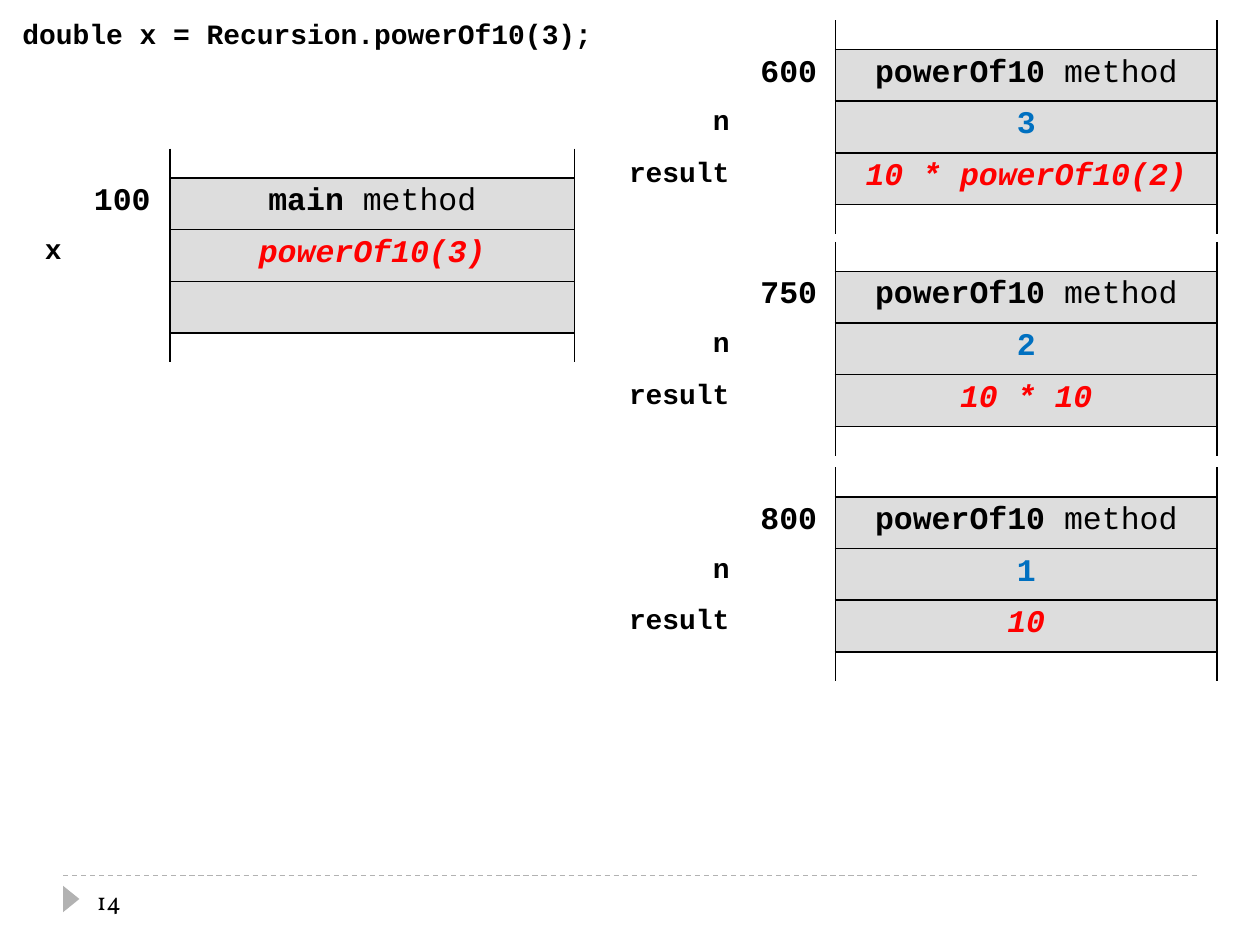
from lxml import etree
from pptx import Presentation
from pptx.dml import color
from pptx.enum import dml, shapes, text
from pptx.oxml import ns
from pptx.util import Inches, Pt

MONO = "Courier New"
BLACK, GRAY, RED, BLUE = "000000", "B2B2B2", "FF0000", "0070C0"
CELL_FILL = "DDDDDD"
ROW_HEIGHTS = (0.23, 0.41, 0.41, 0.41, 0.23)
CALL_COLUMNS = (1.17, 0.74, 3.03)
MAIN_COLUMNS = (0.53, 0.76, 3.21)
LEFT, RIGHT = text.PP_ALIGN.LEFT, text.PP_ALIGN.RIGHT
CENTER = text.PP_ALIGN.CENTER


def rgb(value):
    """Turn a hex string into a colour."""
    return color.RGBColor.from_string(value)


def write(para, words, font=MONO, size=18, shade=BLACK, bold=True, italic=False, align=CENTER):
    """Add one formatted span of text to a paragraph."""
    para.alignment = align
    span = para.add_run()
    span.text = words
    span.font.name = font
    span.font.size = Pt(size)
    span.font.bold = bold
    span.font.italic = italic
    span.font.color.rgb = rgb(shade)


def add_label(page, left, top, width, height, words, wrap=True, **style):
    """Place a text box holding one line."""
    box = page.shapes.add_textbox(Inches(left), Inches(top), Inches(width), Inches(height))
    frame = box.text_frame
    frame.word_wrap = wrap
    frame.vertical_anchor = text.MSO_ANCHOR.MIDDLE
    write(frame.paragraphs[0], words, align=LEFT, **style)


def set_borders(cell, edges):
    """Draw the named edges of a cell in black and hide the others."""
    properties = cell._tc.get_or_add_tcPr()
    for edge in "LRTB":
        line = etree.SubElement(properties, ns.qn(f"a:ln{edge}"), w=str(Pt(1)))
        if edge in edges:
            fill = etree.SubElement(line, ns.qn("a:solidFill"))
            etree.SubElement(fill, ns.qn("a:srgbClr"), val=BLACK)
        else:
            etree.SubElement(line, ns.qn("a:noFill"))


def add_frame(page, left, top, columns, address, method, variables):
    """Draw a stack frame: address, method name, then named values."""
    holder = page.shapes.add_table(
        len(ROW_HEIGHTS), len(columns), Inches(left), Inches(top),
        Inches(sum(columns)), Inches(sum(ROW_HEIGHTS)))
    table = holder.table
    table.first_row = table.horz_banding = False
    for column, width in zip(table.columns, columns):
        column.width = Inches(width)
    for row, height in zip(table.rows, ROW_HEIGHTS):
        row.height = Inches(height)

    last = len(ROW_HEIGHTS) - 1
    memory_edges = {0: "LRB", last: "LRT"}
    for index, row in enumerate(table.rows):
        for cell, edges in zip(row.cells, ("", "R", memory_edges.get(index, "LRTB"))):
            set_borders(cell, edges)
            cell.fill.background()
        if 0 < index < last:
            row.cells[2].fill.solid()
            row.cells[2].fill.fore_color.rgb = rgb(CELL_FILL)

    def first_para(row, column):
        """Return the paragraph of a table cell."""
        return table.cell(row, column).text_frame.paragraphs[0]

    write(first_para(1, 1), address)
    write(first_para(1, 2), f"{method} ")
    write(first_para(1, 2), "method", bold=False)
    for index, (name, value, shade) in enumerate(variables, start=2):
        write(first_para(index, 0), name, size=16, align=RIGHT)
        write(first_para(index, 2), value, shade=shade, italic=shade == RED)
    for cell in table.iter_cells():
        if not cell.text:
            para = cell.text_frame.paragraphs[0]
            etree.SubElement(para._p, ns.qn("a:endParaRPr"), sz="800")


def add_footer(page, left, top, width, number):
    """Draw the dashed rule, the marker and the page number."""
    rule = page.shapes.add_connector(
        shapes.MSO_CONNECTOR.STRAIGHT, Inches(left), Inches(top),
        Inches(left + width), Inches(top))
    rule.line.color.rgb = rgb(GRAY)
    rule.line.width = Pt(0.75)
    rule.line.dash_style = dml.MSO_LINE.DASH
    etree.SubElement(rule._element.spPr, ns.qn("a:effectLst"))
    marker = page.shapes.add_shape(
        shapes.MSO_SHAPE.ISOSCELES_TRIANGLE, Inches(left - 0.04), Inches(top + 0.12),
        Inches(0.21), Inches(0.13))
    marker.rotation = 90
    marker.shadow.inherit = False
    marker.fill.solid()
    marker.fill.fore_color.rgb = rgb(GRAY)
    marker.line.fill.background()
    add_label(page, left + 0.17, top, 2.17, 0.4, number, font="Vollkorn", size=14, bold=False)


def main():
    """Build and save the recursion trace slide."""
    deck = Presentation()
    deck.slide_width, deck.slide_height = Inches(10), Inches(7.5)
    page = deck.slides.add_slide(deck.slide_layouts[6])
    add_footer(page, 0.5, 6.95, 9, "14")
    calls = (
        (0.16, "600", "3", "10 * powerOf10(2)"),
        (1.92, "750", "2", "10 * 10"),
        (3.71, "800", "1", "10"),
    )
    for top, address, n, result in calls:
        add_frame(page, 4.72, top, CALL_COLUMNS, address, "powerOf10",
                  (("n", n, BLUE), ("result", result, RED)))
    add_frame(page, 0.06, 1.18, MAIN_COLUMNS, "100", "main", (("x", "powerOf10(3)", RED),))
    add_label(page, 0.08, 0.08, 4.79, 0.37, "double x = Recursion.powerOf10(3);",
              wrap=False, size=16)
    deck.save("out.pptx")


if __name__ == "__main__":
    main()
